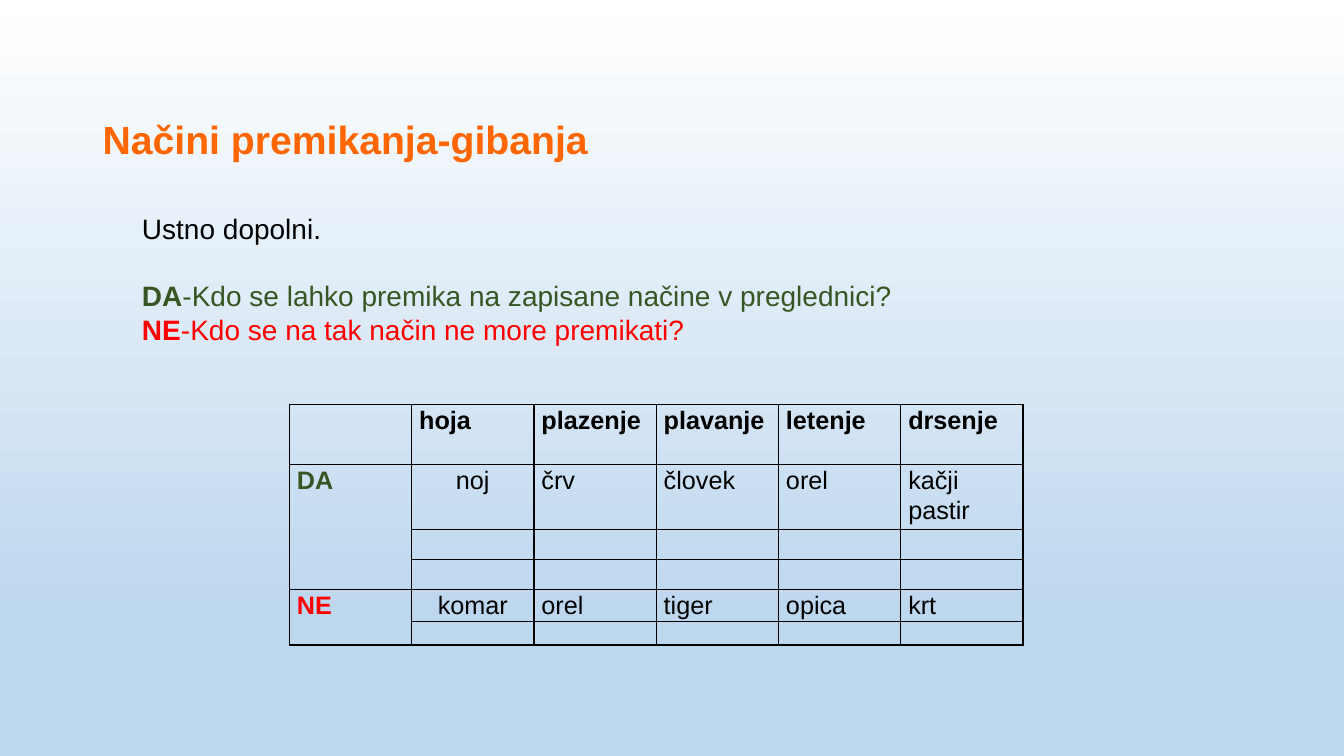
"""Build a slide asking which animals can or cannot move in each listed way."""
from lxml import etree
from pptx import Presentation
from pptx.dml.color import RGBColor
from pptx.enum import text
from pptx.oxml.ns import qn
from pptx.util import Pt

COLORS = {"title": "FF6600", "text": "000000", "yes": "385623", "no": "FF0000",
          "sky_top": "FFFFFF", "sky_bottom": "BDD7EE"}
FONT = "Arial"
TITLE = "Načini premikanja-gibanja"
INSTRUCTIONS = [
    ("", "Ustno dopolni.", "text", 0),
    ("DA", "-Kdo se lahko premika na zapisane načine v preglednici?", "yes", 24),
    ("NE", "-Kdo se na tak način ne more premikati?", "no", 0),
]
TABLE_ROWS = [
    ["", "hoja", "plazenje", "plavanje", "letenje", "drsenje"],
    ["DA", "noj", "črv", "človek", "orel", "kačji pastir"],
    [""] * 6,
    [""] * 6,
    ["NE", "komar", "orel", "tiger", "opica", "krt"],
    [""] * 6,
]
ROW_HEIGHTS = [43, 43, 21.5, 21.5, 21.5, 16.5]
COLUMN_WIDTH = 87.35
LABEL_SPANS = [(1, 3), (4, 5)]
LABEL_COLORS = {"DA": "yes", "NE": "no"}


def style_font(font, size, color, bold=False):
    font.name = FONT
    font.size = Pt(size)
    font.bold = bold
    font.color.rgb = RGBColor.from_string(COLORS[color])


def add_text_frame(slide, left, top, width, height):
    frame = slide.shapes.add_textbox(Pt(left), Pt(top), Pt(width), Pt(height)).text_frame
    frame.word_wrap = True
    return frame


def paint_background(slide):
    fill = slide.background.fill
    fill.gradient()
    fill.gradient_angle = 270
    for stop, color, position in zip(fill.gradient_stops, ("sky_top", "sky_bottom"), (0, 0.82)):
        stop.color.rgb = RGBColor.from_string(COLORS[color])
        stop.position = position


def add_title(slide):
    frame = add_text_frame(slide, 66.25, 82.5, 828, 34)
    frame.margin_top = frame.margin_bottom = 0
    paragraph = frame.paragraphs[0]
    paragraph.text = TITLE
    style_font(paragraph.font, 28, "title", True)


def add_instructions(slide):
    frame = add_text_frame(slide, 94.3, 147.6, 771, 116.6)
    for index, (label, sentence, color, space) in enumerate(INSTRUCTIONS):
        paragraph = frame.add_paragraph() if index else frame.paragraphs[0]
        paragraph.space_before = Pt(space)
        style_font(paragraph.font, 20, color)
        if label:
            run = paragraph.add_run()
            run.text = label
            run.font.bold = True
        paragraph.add_run().text = sentence


def draw_borders(cell):
    properties = cell._tc.get_or_add_tcPr()
    for position, side in enumerate(("lnL", "lnR", "lnT", "lnB")):
        line = etree.Element(qn(f"a:{side}"), w=str(Pt(1)))
        solid = etree.SubElement(line, qn("a:solidFill"))
        etree.SubElement(solid, qn("a:srgbClr"), val=COLORS["text"])
        properties.insert(position, line)


def fill_cell(cell, content, row, column):
    cell.margin_left = cell.margin_right = Pt(5.4)
    cell.margin_top = cell.margin_bottom = 0
    cell.fill.background()
    draw_borders(cell)
    paragraph = cell.text_frame.paragraphs[0]
    paragraph.text = content
    paragraph.line_spacing = 1.07
    if row and column == 1:
        paragraph.alignment = text.PP_ALIGN.CENTER
    size = 18 if content else 10
    style_font(paragraph.font, size, LABEL_COLORS.get(content, "text"), row == 0 or column == 0)


def add_movement_table(slide):
    column_count = len(TABLE_ROWS[0])
    table = slide.shapes.add_table(
        len(TABLE_ROWS), column_count, Pt(206.7), Pt(288.9),
        Pt(COLUMN_WIDTH * column_count), Pt(sum(ROW_HEIGHTS))).table
    table.first_row = table.horz_banding = False
    for column in table.columns:
        column.width = Pt(COLUMN_WIDTH)
    for row, (contents, height) in enumerate(zip(TABLE_ROWS, ROW_HEIGHTS)):
        table.rows[row].height = Pt(height)
        for column, content in enumerate(contents):
            fill_cell(table.cell(row, column), content, row, column)
    for first, last in LABEL_SPANS:
        table.cell(first, 0).merge(table.cell(last, 0))


def main():
    presentation = Presentation()
    presentation.slide_width, presentation.slide_height = Pt(960), Pt(540)
    slide = presentation.slides.add_slide(presentation.slide_layouts[6])
    paint_background(slide)
    add_title(slide)
    add_movement_table(slide)
    add_instructions(slide)
    presentation.save("out.pptx")


if __name__ == "__main__":
    main()
